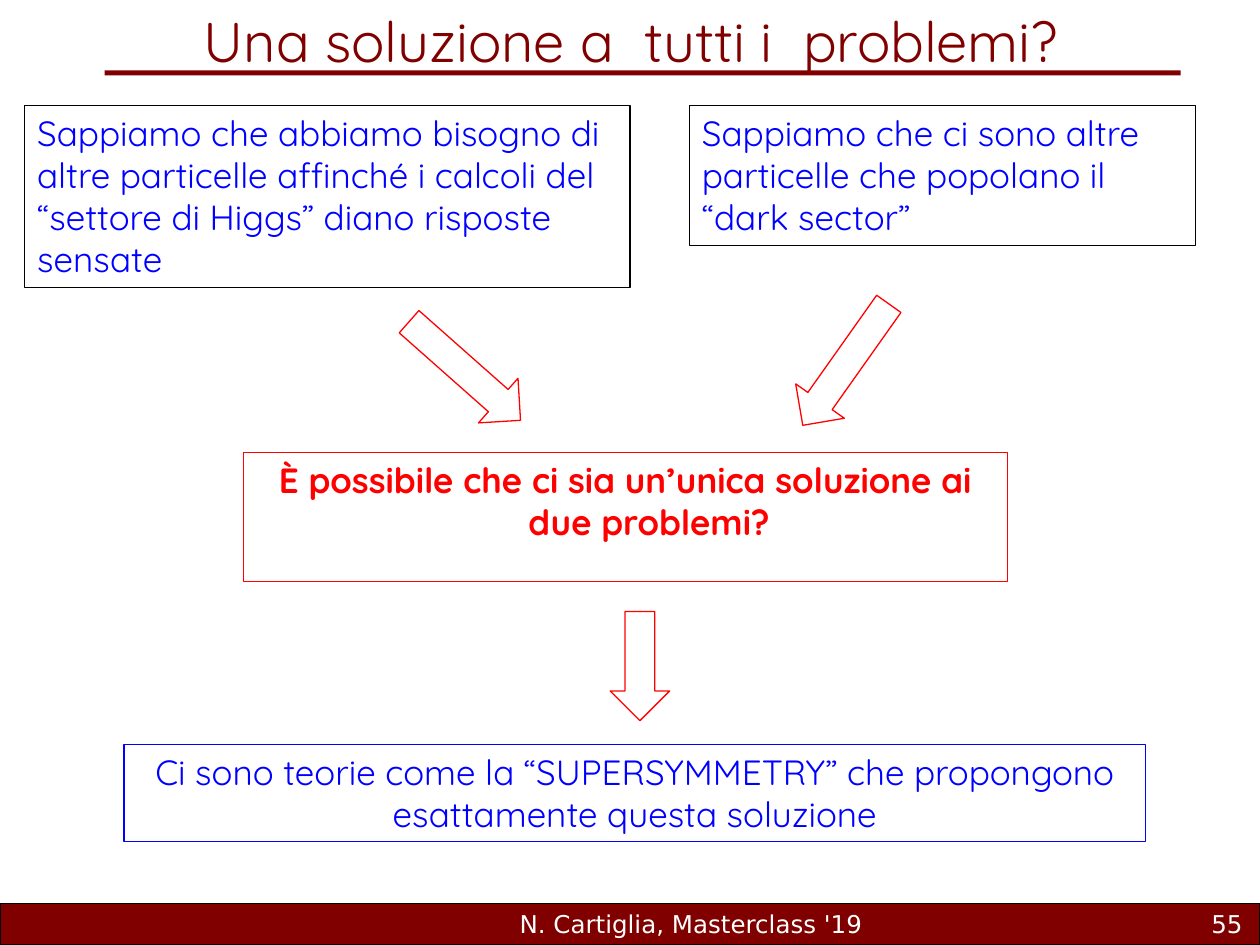
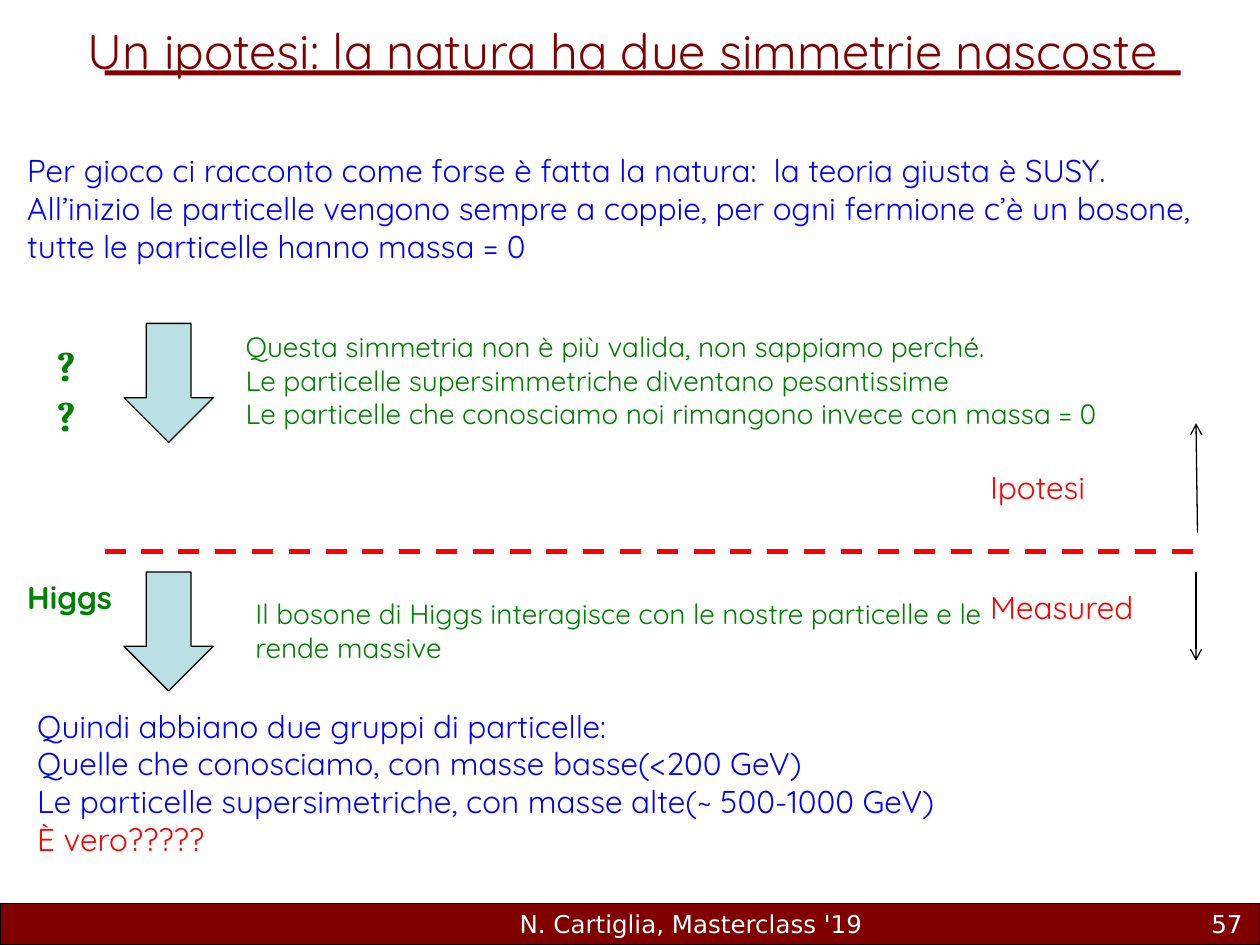
from pptx import Presentation
from pptx.dml.color import RGBColor as RGB
from pptx.enum.dml import MSO_LINE_DASH_STYLE as DASH
from pptx.enum.shapes import MSO_CONNECTOR as CONN, MSO_SHAPE as SHAPE
from pptx.enum.text import MSO_ANCHOR as ANCHOR, PP_ALIGN as ALIGN
from pptx.oxml.ns import qn
from pptx.util import Cm, Pt
from lxml import etree

COLORS = {
    "maroon": "800000",
    "blue": "0000FF",
    "red": "FF0000",
    "green": "008000",
    "aqua": "BBE0E3",
    "black": "000000",
    "white": "FFFFFF",
}
WIDTH, HEIGHT = 25.4, 19.05
BAND_H = 0.84
BODY_FONT = "Quicksand"
FOOTER_FONT = "DejaVu Sans"


def color(name):
    return RGB.from_string(COLORS[name])


def add_shape(s, kind, box, fill=None, line=None, rotation=0):
    sp = s.shapes.add_shape(kind, *map(Cm, box))
    sp.shadow.inherit = False
    sp.rotation = rotation
    if fill:
        sp.fill.solid()
        sp.fill.fore_color.rgb = color(fill)
    else:
        sp.fill.background()
    if line:
        sp.line.color.rgb = color(line)
        sp.line.width = Pt(0.75)
    else:
        sp.line.fill.background()
    return sp


def write(sp, lines, size, ink, align=ALIGN.LEFT, font=BODY_FONT, bold=False, anchor=ANCHOR.TOP):
    tf = sp.text_frame
    tf.word_wrap = True
    tf.vertical_anchor = anchor
    for i, line in enumerate(lines):
        p = tf.add_paragraph() if i else tf.paragraphs[0]
        p.text = line
        p.alignment = align
        p.font.name = font
        p.font.size = Pt(size)
        p.font.bold = bold
        p.font.color.rgb = color(ink)
    return tf


def add_text(s, box, lines, size, ink, **style):
    return write(s.shapes.add_textbox(*map(Cm, box)), lines, size, ink, **style)


def add_panel(s, box, line, text, ink, **style):
    return write(add_shape(s, SHAPE.RECTANGLE, box, line=line), [text], 20, ink, **style)


def add_line(s, start, end, ink, width, dash=None, arrow=False):
    c = s.shapes.add_connector(CONN.STRAIGHT, *map(Cm, start + end))
    c.line.color.rgb = color(ink)
    c.line.width = Pt(width)
    if dash:
        c.line.dash_style = dash
    if arrow:
        etree.SubElement(c.line._get_or_add_ln(), qn("a:tailEnd"), type="arrow")
    etree.SubElement(c._element.spPr, qn("a:effectLst"))


def start_slide(prs, title, title_box, title_size, number):
    s = prs.slides.add_slide(prs.slide_layouts[6])
    top = HEIGHT - BAND_H
    add_shape(s, SHAPE.RECTANGLE, (0, top, WIDTH, BAND_H), "maroon", "black")
    add_shape(s, SHAPE.RECTANGLE, (2.11, 1.42, 21.69, 0.1), "maroon")
    add_text(s, title_box, [title], title_size, "maroon", align=ALIGN.CENTER)
    for x, w, text, align in (
        (8.71, 10.44, "N. Cartiglia, Masterclass '19", ALIGN.CENTER),
        (20.02, 5.28, str(number), ALIGN.RIGHT),
    ):
        add_text(s, (x, top, w, BAND_H), [text], 14, "white", align=align,
                 font=FOOTER_FONT, anchor=ANCHOR.MIDDLE)
    return s


def add_premises(s, x, y):
    add_panel(s, (x, y, 12.2, 3.67), "black",
              "Sappiamo che abbiamo bisogno di altre particelle affinché i calcoli del "
              "“settore di Higgs” diano risposte sensate", "blue")
    add_panel(s, (x + 13.4, y, 10.2, 2.82), "black",
              "Sappiamo che ci sono altre particelle che popolano il “dark sector”", "blue")
    for dx, dy, turn in ((7.37, 4.75, 41.5), (15.05, 4.62, 125.3)):
        add_shape(s, SHAPE.RIGHT_ARROW, (x + dx, y + dy, 3, 1.2), line="red", rotation=turn)


def add_answer(s, x, y):
    question = add_panel(s, (x + 2.41, y, 15.4, 2.6), "red",
                         "È possibile che ci sia un’unica soluzione ai due problemi?",
                         "red", align=ALIGN.CENTER, bold=True)
    pPr = question.paragraphs[0]._p.get_or_add_pPr()
    pPr.set("marL", str(Cm(0.95)))
    pPr.set("indent", str(Cm(-0.95)))
    add_shape(s, SHAPE.RIGHT_ARROW, (x + 9.3, y + 3.71, 2.2, 1.2), line="red", rotation=90)
    add_panel(s, (x, y + 5.89, 20.6, 1.96), "blue",
              "Ci sono teorie come la “SUPERSYMMETRY” che propongono esattamente questa soluzione",
              "blue", align=ALIGN.CENTER)


def add_stage(s, x, y, label, label_box, note, note_box, **label_style):
    add_shape(s, SHAPE.DOWN_ARROW, (x, y, 1.8, 2.4), "aqua", "black")
    for (dx, dy, w, h), lines, size, style in (
        (note_box, note, 16, {}),
        (label_box, [label], label_style.pop("size"), dict(label_style, bold=True)),
    ):
        add_text(s, (x + dx, y + dy, w, h), lines, size, "green", **style)


def add_divider(s, x, y, w):
    add_line(s, (x, y), (x + w, y), "red", 3, dash=DASH.DASH)
    right = x + w - 0.2
    add_line(s, (right, y + 0.41), (right, y + 2.2), "black", 0.75, arrow=True)
    add_line(s, (right + 0.03, y - 0.38), (right, y - 2.59), "black", 0.75, arrow=True)
    for dy, text in ((-1.8, "Ipotesi"), (0.6, "Measured")):
        add_text(s, (x + 17.6, y + dy, 3.8, 1.02), [text], 18, "red")


def build_solution(prs):
    s = start_slide(prs, "Una soluzione a  tutti i  problemi?", (1.3, 0, 22.86, 1.52), 32, 55)
    add_premises(s, 0.5, 2.13)
    add_answer(s, 2.5, 9.12)


def build_hypothesis(prs):
    s = start_slide(prs, "Un ipotesi: la natura ha due simmetrie nascoste",
                    (0.5, 0.28, 24.1, 1.45), 28, 57)
    add_text(s, (0.3, 2.92, 24.56, 2.57), [
        "Per gioco ci racconto come forse è fatta la natura:  la teoria giusta è SUSY.",
        "All’inizio le particelle vengono sempre a coppie, per ogni fermione c’è un bosone, "
        "tutte le particelle hanno massa = 0",
    ], 18, "blue")
    add_stage(s, 2.5, 6.52, "??", (-1.6, 0.2, 1.14, 2.2), [
        "Questa simmetria non è più valida, non sappiamo perché.",
        "Le particelle supersimmetriche diventano pesantissime",
        "Le particelle che conosciamo noi rimangono invece con massa = 0",
    ], (2.2, 0, 19.8, 2.31), size=24, font="Cambria")
    add_stage(s, 2.5, 11.53, "Higgs", (-2.2, 0, 2.4, 1.02), [
        "Il bosone di Higgs interagisce con le nostre particelle e le rende massive",
    ], (2.4, 0.38, 15.2, 1.63), size=18)
    add_divider(s, 2.11, 11.12, 22.2)
    tf = add_text(s, (0.5, 14.12, 24.9, 3.33), [
        "Quindi abbiano due gruppi di particelle:",
        "Quelle che conosciamo, con masse basse(<200 GeV)",
        "Le particelle supersimetriche, con masse alte(~ 500-1000 GeV)",
        "È vero?????",
    ], 18, "blue")
    tf.paragraphs[-1].font.color.rgb = color("red")


def main():
    prs = Presentation()
    prs.slide_width, prs.slide_height = Cm(WIDTH), Cm(HEIGHT)
    build_solution(prs)
    build_hypothesis(prs)
    prs.save("out.pptx")


if __name__ == "__main__":
    main()
